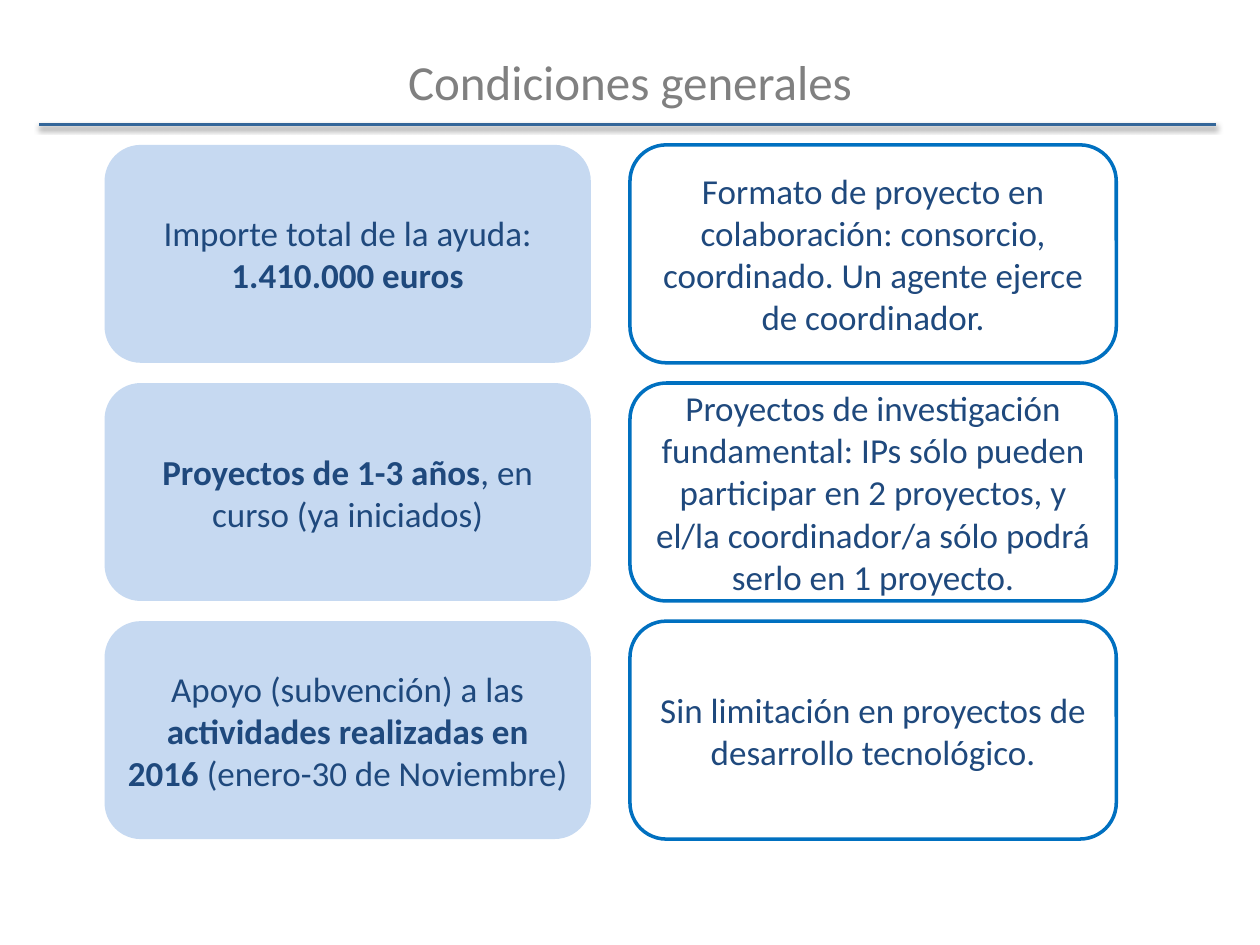
from lxml import etree
from pptx import Presentation
from pptx.dml.color import RGBColor
from pptx.enum.shapes import MSO_CONNECTOR, MSO_SHAPE
from pptx.enum.text import MSO_ANCHOR, PP_ALIGN
from pptx.oxml import parse_xml
from pptx.oxml.ns import nsdecls
from pptx.util import Inches, Pt

ROUNDED = MSO_SHAPE.ROUNDED_RECTANGLE
STRAIGHT = MSO_CONNECTOR.STRAIGHT
MIDDLE = MSO_ANCHOR.MIDDLE
CENTER = PP_ALIGN.CENTER

# Content: each row holds a left and a right box, each a list of (text, bold)
TITLE = "Condiciones generales"
ROWS = [
    ([("Importe total de la ayuda: ", False), ("1.410.000 euros", True)],
     [("Formato de proyecto en colaboración: consorcio, coordinado. "
       "Un agente ejerce de coordinador.", False)]),
    ([("Proyectos de 1-3 años", True), (", en curso (ya iniciados)", False)],
     [("Proyectos de investigación fundamental: IPs sólo pueden participar "
       "en 2 proyectos, y el/la coordinador/a sólo podrá serlo en 1 proyecto.", False)]),
    ([("Apoyo (subvención) a las ", False), ("actividades realizadas en 2016 ", True),
      ("(enero-30 de Noviembre)", False)],
     [("Sin limitación en proyectos de desarrollo tecnológico.", False)]),
]

THEME = {
    "font": "Calibri", "title_size": 28, "body_size": 20, "line_width": 2,
    "title": "808080", "text": "1F497D", "fill": "C6D9F1",
    "outline": "0070C0", "rule": "336699",
}

# Grid, in inches
LEFT, TOP = 0.83, 1.15
BOX_W, BOX_H = 3.86, 1.73
STEP_X, STEP_Y = 4.17, 1.89


def color(name):
    return RGBColor.from_string(THEME[name])


def style_run(r, size, name, bold=False):
    r.font.name = THEME["font"]
    r.font.size = Pt(THEME[size])
    r.font.color.rgb = color(name)
    r.font.bold = bold


def set_line(line, name):
    line.color.rgb = color(name)
    line.width = Pt(THEME["line_width"])


def add_box(s, row, col, runs):
    sp = s.shapes.add_shape(ROUNDED, Inches(LEFT + col * STEP_X), Inches(TOP + row * STEP_Y),
                            Inches(BOX_W), Inches(BOX_H))
    sp.shadow.inherit = False
    if col == 0:
        sp.fill.solid()
        sp.fill.fore_color.rgb = color("fill")
        sp.line.fill.background()
    else:
        sp.fill.background()
        set_line(sp.line, "outline")
    tf = sp.text_frame
    tf.word_wrap = True
    tf.vertical_anchor = MIDDLE
    p = tf.paragraphs[0]
    p.alignment = CENTER
    for text, bold in runs:
        r = p.add_run()
        r.text = text
        style_run(r, "body_size", "text", bold)


prs = Presentation()
prs.slide_width, prs.slide_height = Inches(10), Inches(7.5)
s = prs.slides.add_slide(prs.slide_layouts[5])

# Title
title = s.shapes.title
title.left, title.top = Inches(0.5), Inches(0.3)
title.width, title.height = Inches(9), Inches(0.69)
tf = title.text_frame
tf.text = TITLE
tf.vertical_anchor = MIDDLE
tf.paragraphs[0].alignment = CENTER
style_run(tf.paragraphs[0].runs[0], "title_size", "title")

# Rule under the title, with a soft shadow below it
rule = s.shapes.add_connector(STRAIGHT, Inches(0.31), Inches(0.99), Inches(9.65), Inches(0.99))
set_line(rule.line, "rule")
effects = parse_xml(f"<a:effectLst {nsdecls('a')}/>")
shadow = etree.SubElement(effects, effects.tag.replace("effectLst", "outerShdw"),
                          blurRad=str(Pt(3.1)), dist=str(Pt(1.6)), dir="5400000", rotWithShape="0")
shadow.append(parse_xml(
    f'<a:srgbClr {nsdecls("a")} val="000000"><a:alpha val="38000"/></a:srgbClr>'))
rule._element.spPr.append(effects)

# Boxes
for row, boxes in enumerate(ROWS):
    for col, runs in enumerate(boxes):
        add_box(s, row, col, runs)

prs.save("out.pptx")
